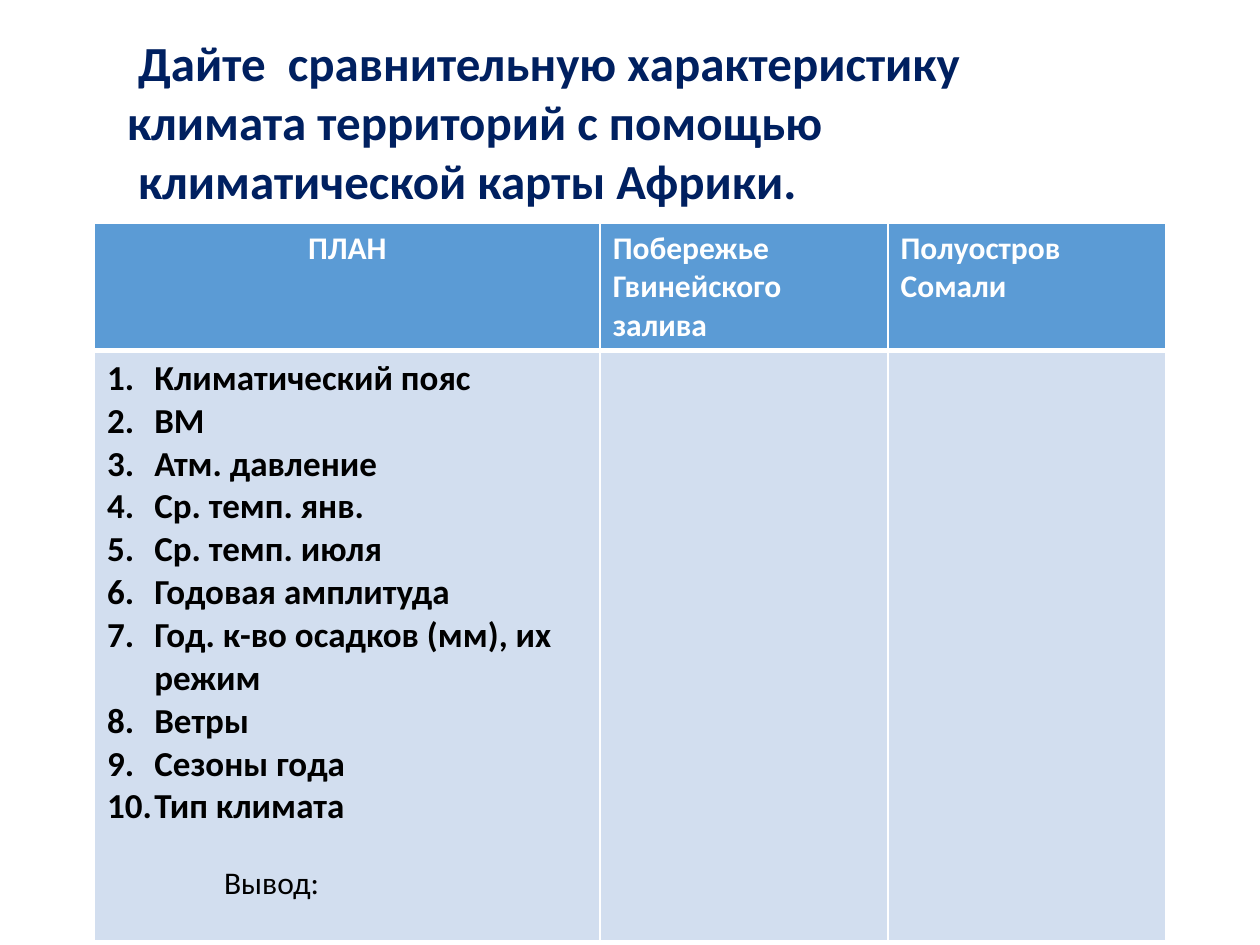
from dataclasses import dataclass
from lxml.etree import SubElement
from pptx import Presentation
from pptx.dml.color import RGBColor
from pptx.enum.text import PP_ALIGN
from pptx.oxml.ns import qn
from pptx.util import Pt


@dataclass(frozen=True)
class Theme:
    font: str = "Calibri"
    navy: str = "002060"
    blue: str = "5B9BD5"
    pale: str = "D2DEEF"
    white: str = "FFFFFF"
    black: str = "000000"
    title: int = 28
    plan: int = 20
    small: int = 18


theme = Theme()


def style(para, size, color, bold=True):
    for run in para.runs:
        run.font.name = theme.font
        run.font.size = Pt(size)
        run.font.bold = bold
        run.font.color.rgb = RGBColor.from_string(color)


def paint(cell, fill, top, bottom):
    props = cell._tc.get_or_add_tcPr()
    for side, width in (("L", 1), ("R", 1), ("T", top), ("B", bottom)):
        line = SubElement(props, qn("a:ln" + side), w=str(Pt(width)))
        solid = SubElement(line, qn("a:solidFill"))
        SubElement(solid, qn("a:srgbClr"), val=theme.white)
    cell.fill.solid()
    cell.fill.fore_color.rgb = RGBColor.from_string(fill)


deck = Presentation()
deck.slide_width, deck.slide_height = Pt(720), Pt(540)
slide = deck.slides.add_slide(deck.slide_layouts[6])

# Title, with the first and last lines slightly indented
box = slide.shapes.add_textbox(Pt(65.5), Pt(15.1), Pt(502.6), Pt(108.7))
box.text_frame.word_wrap = False
box.text_frame.text = "\n".join([
    "Дайте  сравнительную характеристику",
    "климата территорий с помощью",
    "климатической карты Африки.",
])
for para, indent in zip(box.text_frame.paragraphs, (6.3, 0, 6.3)):
    para._p.get_or_add_pPr().set("indent", str(Pt(indent)))
    style(para, theme.title, theme.navy)

# Comparison table
heads = ["ПЛАН", "Побережье Гвинейского залива", "Полуостров Сомали"]
plan = [
    "Климатический пояс", "ВМ", "Атм. давление", "Ср. темп. янв.",
    "Ср. темп. июля", "Годовая амплитуда",
    "Год. к-во осадков (мм), их режим", "Ветры", "Сезоны года",
    "Тип климата",
]
table = slide.shapes.add_table(
    2, 3, Pt(54), Pt(127.4), Pt(612), Pt(410)).table
for col, width in zip(table.columns, (289, 164.5, 158.5)):
    col.width = Pt(width)
for row, height in zip(table.rows, (73, 337)):
    row.height = Pt(height)

# Header row
for cell, head in zip(table.rows[0].cells, heads):
    paint(cell, theme.blue, 1, 3)
    cell.text_frame.text = head
    style(cell.text_frame.paragraphs[0], theme.small, theme.white)
table.cell(0, 0).text_frame.paragraphs[0].alignment = PP_ALIGN.CENTER

# Body row with the numbered plan
for cell in table.rows[1].cells:
    paint(cell, theme.pale, 3, 1)
frame = table.cell(1, 0).text_frame
frame.text = "\n".join(plan)
for para in frame.paragraphs:
    props = para._p.get_or_add_pPr()
    props.set("marL", str(Pt(27)))
    props.set("indent", str(Pt(-27)))
    SubElement(props, qn("a:buFont"), typeface="+mj-lt")
    SubElement(props, qn("a:buAutoNum"), type="arabicPeriod")
    style(para, theme.plan, theme.black)

# Conclusion label
box = slide.shapes.add_textbox(Pt(121), Pt(489.6), Pt(69), Pt(29))
box.text_frame.word_wrap = False
box.text_frame.text = "Вывод:"
style(box.text_frame.paragraphs[0], theme.small, theme.black, bold=False)

deck.save("out.pptx")
